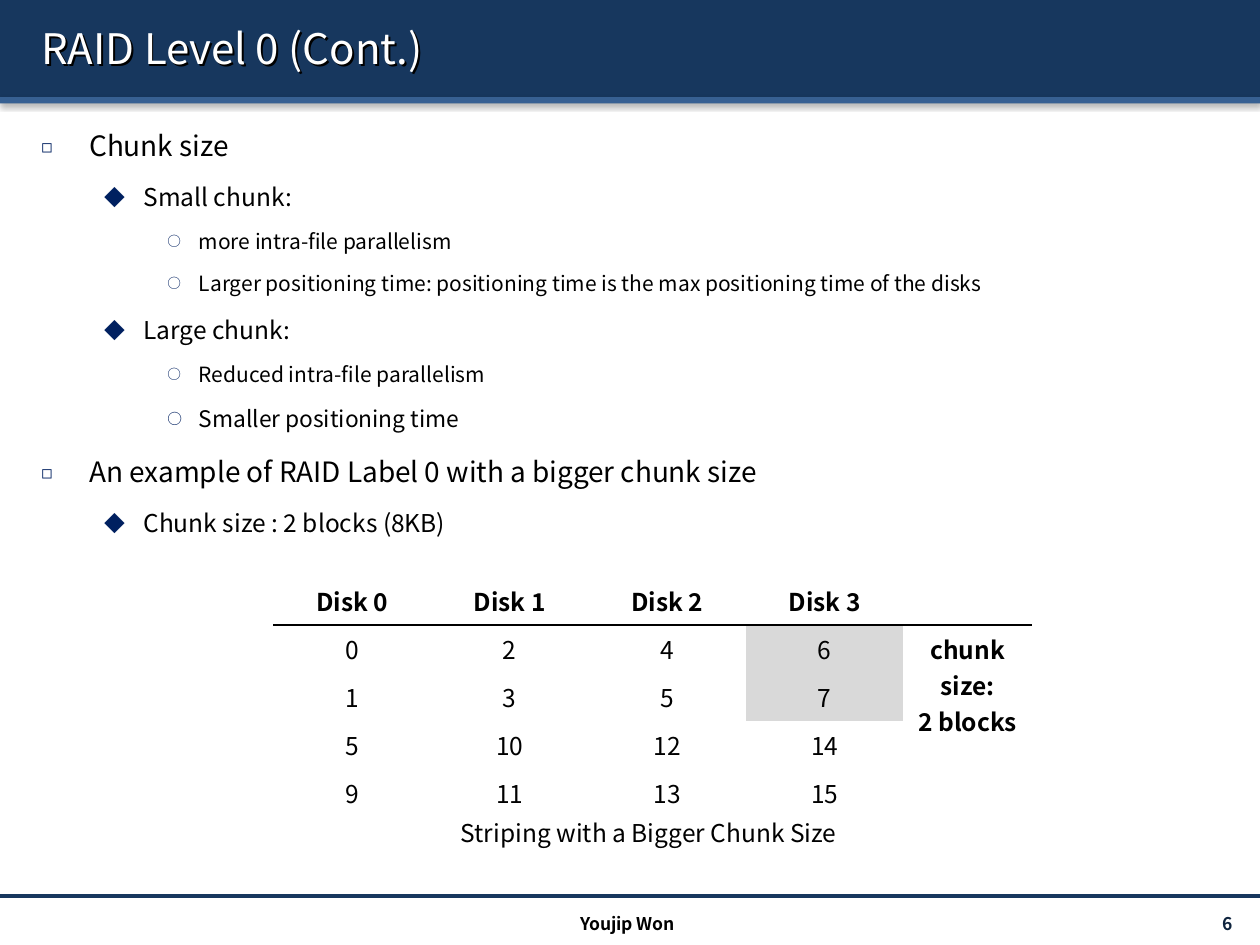
import lxml.etree
import pptx
import pptx.dml.color
import pptx.enum.shapes
import pptx.enum.text
import pptx.oxml
import pptx.oxml.ns
import pptx.util

WIDTH, HEIGHT = 10, 7.5
FONT = "Noto Sans CJK KR"
COLORS = {
    "navy": "17375E", "blue": "376092", "bullet": "002060", "number": "0F243E",
    "text": "000000", "paper": "FFFFFF", "chunk": "D9D9D9",
}
ALIGN = pptx.enum.text.PP_ALIGN
ANCHOR = pptx.enum.text.MSO_ANCHOR
NO_TABLE_STYLE = "{2D5ABB26-0587-4C30-8999-92F81FD0307C}"

# Per outline level: text indent, hanging width, bullet, bullet size in percent
LEVELS = [(0.38, 0.38, "◻", 65), (0.81, 0.31, "◆", 85), (1.25, 0.25, "○", 65)]
# Level, size in points, text
OUTLINE = [
    (0, 16, "Chunk size"),
    (1, 14, "Small chunk:"),
    (2, 12, "more intra-file parallelism"),
    (2, 12, "Larger positioning time: positioning time is the max positioning time of the disks"),
    (1, 14, "Large chunk:"),
    (2, 12, "Reduced intra-file parallelism"),
    (2, 13, "Smaller positioning time"),
    (0, 16, "An example of RAID Label 0 with a bigger chunk size"),
    (1, 14, "Chunk size : 2 blocks (8KB)"),
]
DISK_ROWS = [
    ["Disk 0", "Disk 1", "Disk 2", "Disk 3"],
    ["0", "2", "4", "6"],
    ["1", "3", "5", "7"],
    ["5", "10", "12", "14"],
    ["9", "11", "13", "15"],
]
CHUNK_CELLS = {(1, 3), (2, 3)}


def rgb(name):
    return pptx.dml.color.RGBColor.from_string(COLORS[name])


def inches(*lengths):
    return [pptx.util.Inches(length) for length in lengths]


def add_xml(parent, xml, index=None):
    """Put a DrawingML fragment into parent, at the end unless index is given."""
    opening, rest = xml.split(" ", 1)
    element = pptx.oxml.parse_xml(f"{opening} {pptx.oxml.ns.nsdecls('a')} {rest}")
    parent.insert(len(parent) if index is None else index, element)


def add_shadow(properties, blur, distance, angle, opacity):
    """Shadow lengths are in points, angle in degrees, opacity in percent."""
    add_xml(properties, f'<a:effectLst ><a:outerShdw blurRad="{pptx.util.Pt(blur)}" '
            f'dist="{pptx.util.Pt(distance)}" dir="{angle * 60000}" algn="t" rotWithShape="0">'
            f'<a:srgbClr val="{COLORS["text"]}"><a:alpha val="{opacity * 1000}"/></a:srgbClr>'
            '</a:outerShdw></a:effectLst>')


def style_paragraph(paragraph, size, color="text", bold=False, align=ALIGN.LEFT):
    paragraph.alignment = align
    font = paragraph.font
    font.name, font.size, font.bold = FONT, pptx.util.Pt(size), bold
    font.color.rgb = rgb(color)


def add_band(slide, top, height, color):
    band = slide.shapes.add_shape(
        pptx.enum.shapes.MSO_SHAPE.RECTANGLE, *inches(0, top, WIDTH, height))
    band.fill.solid()
    band.fill.fore_color.rgb = rgb(color)
    band.line.fill.background()
    add_shadow(band._element.spPr, 3.1, 1.6, 90, 38)


def add_footer_rule(slide, y):
    rule = slide.shapes.add_connector(
        pptx.enum.shapes.MSO_CONNECTOR.STRAIGHT, *inches(0, y, WIDTH, y))
    rule.line.color.rgb = rgb("navy")
    rule.line.width = pptx.util.Pt(2)
    add_xml(rule._element.spPr, "<a:effectLst />")


def add_text(slide, box, text, size, anchor=ANCHOR.TOP, **style):
    label = slide.shapes.add_textbox(*inches(*box))
    frame = label.text_frame
    frame.word_wrap = True
    frame.vertical_anchor = anchor
    frame.text = text
    style_paragraph(frame.paragraphs[0], size, **style)
    return label


def add_outline(slide, box):
    frame = slide.shapes.add_textbox(*inches(*box)).text_frame
    frame.word_wrap = True
    frame.auto_size = pptx.enum.text.MSO_AUTO_SIZE.TEXT_TO_FIT_SHAPE
    for index, (level, size, text) in enumerate(OUTLINE):
        paragraph = frame.add_paragraph() if index else frame.paragraphs[0]
        paragraph.text = text
        paragraph.level = level
        paragraph.line_spacing = 1.5
        indent, hanging, bullet, bullet_size = LEVELS[level]
        properties = paragraph._p.get_or_add_pPr()
        properties.set("marL", str(pptx.util.Inches(indent)))
        properties.set("indent", str(-pptx.util.Inches(hanging)))
        if index:
            add_xml(properties, '<a:spcBef ><a:spcPct val="20000"/></a:spcBef>')
        add_xml(properties, f'<a:buClr ><a:srgbClr val="{COLORS["bullet"]}"/></a:buClr>')
        add_xml(properties, f'<a:buSzPct val="{bullet_size * 1000}"/>')
        add_xml(properties, f'<a:buFont typeface="{FONT}"/>')
        add_xml(properties, f'<a:buChar char="{bullet}"/>')
        style_paragraph(paragraph, size)


def fill_cell(cell, text, color="paper", bold=False):
    cell.fill.solid()
    cell.fill.fore_color.rgb = rgb(color)
    cell.text = text
    for paragraph in cell.text_frame.paragraphs:
        style_paragraph(paragraph, 14, bold=bold, align=ALIGN.CENTER)


def add_disk_table(slide, left, top):
    column_widths = [1.25] * 4 + [1.02]
    row_height = 0.38
    frame = slide.shapes.add_table(
        len(DISK_ROWS), len(column_widths),
        *inches(left, top, sum(column_widths), row_height * len(DISK_ROWS)))
    table = frame.table
    table.first_row = table.horz_banding = False
    table._tbl.tblPr.find(pptx.oxml.ns.qn("a:tableStyleId")).text = NO_TABLE_STYLE
    for column, width in zip(table.columns, column_widths):
        column.width = pptx.util.Inches(width)

    for row, blocks in enumerate(DISK_ROWS):
        for disk, block in enumerate(blocks):
            color = "chunk" if (row, disk) in CHUNK_CELLS else "paper"
            fill_cell(table.cell(row, disk), block, color, bold=row == 0)

    note_column = len(column_widths) - 1
    fill_cell(table.cell(0, note_column), "")
    note = table.cell(1, note_column)
    note.merge(table.cell(len(DISK_ROWS) - 1, note_column))
    fill_cell(note, "chunk size:\n2 blocks", bold=True)

    for column in range(len(column_widths)):
        add_xml(table.cell(0, column)._tc.get_or_add_tcPr(),
                f'<a:lnB w="{pptx.util.Pt(0.75)}"><a:solidFill>'
                f'<a:srgbClr val="{COLORS["text"]}"/></a:solidFill></a:lnB>', 0)


def main():
    deck = pptx.Presentation()
    deck.slide_width, deck.slide_height = inches(WIDTH, HEIGHT)
    slide = deck.slides.add_slide(deck.slide_layouts[6])

    add_band(slide, 0, 0.77, "navy")
    add_band(slide, 0.77, 0.05, "blue")
    add_footer_rule(slide, 7.11)

    title = add_text(slide, (0.23, 0.06, 9.61, 0.64), "RAID Level 0 (Cont.)", 24,
                     ANCHOR.MIDDLE, color="paper")
    add_shadow(title._element.spPr, 0, 1.6, 45, 100)
    add_outline(slide, (0.23, 0.84, 9.61, 6.02))

    add_text(slide, (8.71, 7.21, 1.17, 0.24), "6", 10, ANCHOR.MIDDLE,
             color="number", bold=True, align=ALIGN.RIGHT)
    add_text(slide, (3.32, 7.2, 3.32, 0.24), "Youjip Won", 10,
             bold=True, align=ALIGN.CENTER)
    add_disk_table(slide, 2.17, 4.58)
    add_text(slide, (2.87, 6.44, 4.56, 0.34), "Striping with a Bigger Chunk Size", 14,
             align=ALIGN.CENTER)

    deck.save("out.pptx")


if __name__ == "__main__":
    main()
